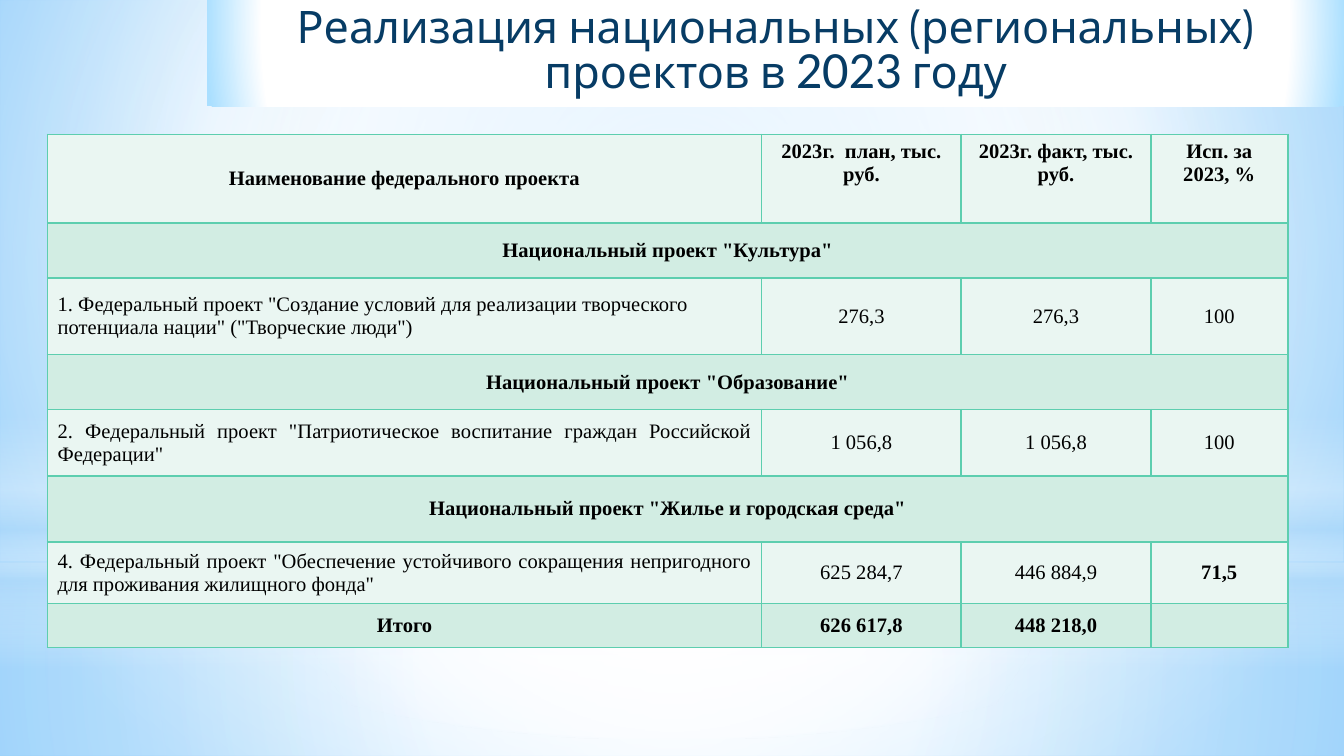
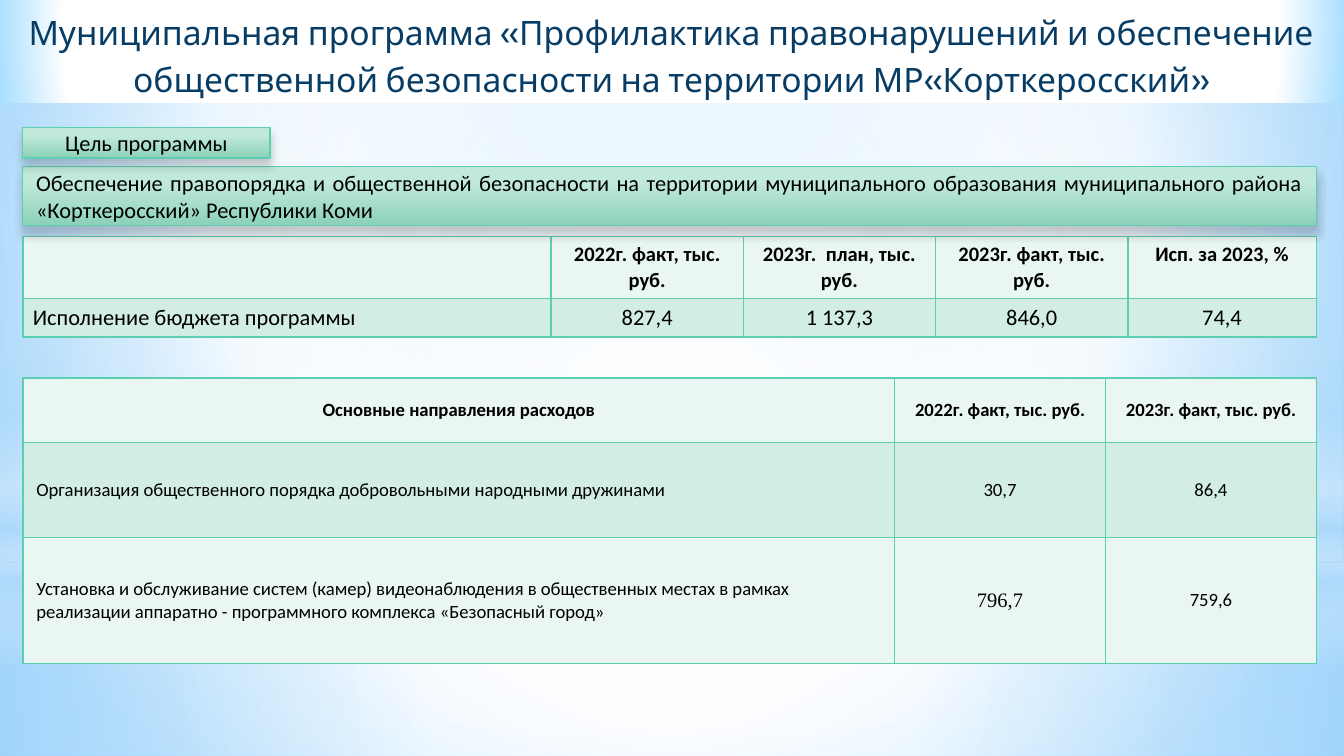
from lxml import etree
from pptx import Presentation
from pptx.dml.color import RGBColor
from pptx.enum.shapes import MSO_SHAPE
from pptx.enum.text import MSO_ANCHOR, PP_ALIGN
from pptx.oxml.ns import qn
from pptx.oxml.xmlchemy import OxmlElement
from pptx.util import Pt

RECT, OVAL = MSO_SHAPE.RECTANGLE, MSO_SHAPE.OVAL
TOP, MID = MSO_ANCHOR.TOP, MSO_ANCHOR.MIDDLE
LEFT, CENTER, JUST = PP_ALIGN.LEFT, PP_ALIGN.CENTER, PP_ALIGN.JUSTIFY

WHITE = RGBColor(0xFF, 0xFF, 0xFF)
BLACK = RGBColor(0, 0, 0)
NAVY = RGBColor(0x07, 0x3C, 0x65)
SKY = RGBColor(0x9E, 0xD5, 0xFF)
AZURE = RGBColor(0x5B, 0xB9, 0xFF)
ICE = RGBColor(0xAA, 0xDF, 0xFF)
HAZE = RGBColor(0xB4, 0xDC, 0xFA)
GREEN = RGBColor(0x5D, 0xCE, 0xAF)
MINT = RGBColor(0xC0, 0xE9, 0xDA)
SAGE = RGBColor(0x8C, 0xD1, 0xB8)
BANDS = (RGBColor(0xEA, 0xF6, 0xF2), RGBColor(0xD2, 0xED, 0xE3))

SANS, SERIF, HEAD = "Calibri", "Times New Roman", "Cabin"
BASE = (20, 10, 20, 60)
CORE = (50, 50, 50, 50)
TIGHT = dict(margin_left=Pt(5.4), margin_right=Pt(5.4),
             margin_top=Pt(3), margin_bottom=Pt(3))
LOOSE = {}

DECOR = (
    (RECT, (0, 301.5, 720, 103.5), CORE,
     ((0, WHITE, 91), (37, WHITE, 76), (100, HAZE, 79))),
    (RECT, (0, 0, 720, 301.5), CORE,
     ((0, WHITE, 89), (48, WHITE, 62), (100, HAZE, 79))),
    (RECT, (0, 222.5, 720, 135), None,
     ((0, WHITE, 0), (29, WHITE, 30), (45, HAZE, 40), (55, WHITE, 26),
      (65, HAZE, 60), (100, WHITE, 0))),
    (OVAL, (0, 94.5, 720, 301.5), CORE, ((0, WHITE, 100), (56, WHITE, 0))),
)


def put(obj, form):
    """Set every attribute named in the format dict."""
    for name, value in form.items():
        setattr(obj, name, value)


def pts(box):
    """Turn numbers into point lengths."""
    return [Pt(n) for n in box]


def tint(host, tag, color, alpha=100):
    """Add a colour, with its opacity, inside a new child."""
    node = etree.SubElement(host, qn(tag))
    node = etree.SubElement(node, qn("a:srgbClr"), val=str(color))
    if alpha < 100:
        etree.SubElement(node, qn("a:alpha"), val=str(alpha * 1000))


def grad(host, stops, focus=None):
    """Swap the solid fill of a host for a round or vertical gradient."""
    fill = OxmlElement("a:gradFill")
    fill.set("rotWithShape", "1")
    steps = etree.SubElement(fill, qn("a:gsLst"))
    for pos, color, alpha in stops:
        tint(steps, "a:gs", color, alpha)
        steps[-1].set("pos", str(pos * 1000))
    if focus:
        ring = etree.SubElement(fill, qn("a:path"), path="circle")
        sides = {k: str(v * 1000) for k, v in zip("ltrb", focus)}
        etree.SubElement(ring, qn("a:fillToRect"), **sides)
    else:
        etree.SubElement(fill, qn("a:lin"), ang="5400000", scaled="0")
    host.replace(host.find(qn("a:solidFill")), fill)


def paint(shape, stops, focus=None):
    """Give a shape a gradient and no shadow."""
    shape.fill.solid()
    grad(shape.element.spPr, stops, focus)
    shape.shadow.inherit = False


def write(para, text, face, size, color=BLACK, bold=False):
    """Add one formatted run."""
    run = para.add_run()
    run.text = text
    put(run.font, dict(name=face, size=Pt(size), bold=bold))
    run.font.color.rgb = color


def scene(master, slide):
    """Build the shared backdrop on the master."""
    master.background.fill.solid()
    grad(master.element.find(".//" + qn("p:bgPr")),
         ((0, SKY, 75), (60, WHITE, 100), (100, AZURE, 100)), BASE)
    tree = master.shapes.element
    for i, (kind, box, focus, stops) in enumerate(DECOR):
        shape = slide.shapes.add_shape(kind, *pts(box))
        paint(shape, stops, focus)
        shape.line.fill.background()
        shape.element.nvSpPr.cNvPr.set("id", str(50 + i))
        tree.insert(2 + i, shape.element)


def banner(slide, box, parts):
    """Place the title on its white band."""
    title = slide.shapes.title
    put(title, dict(zip(("left", "top", "width", "height"), pts(box))))
    paint(title, ((90, WHITE, 100), (100, ICE, 100)), BASE)
    frame = title.text_frame
    put(frame, dict(word_wrap=True, vertical_anchor=TOP))
    para = frame.paragraphs[0]
    put(para, dict(alignment=CENTER, line_spacing=Pt(25)))
    for text, face, size in parts:
        write(para, text, face, size, NAVY)


def panel(slide, box, text, align):
    """Place a green panel with a soft shadow."""
    shape = slide.shapes.add_shape(RECT, *pts(box))
    paint(shape, ((28, MINT, 100), (100, SAGE, 100)))
    shape.line.color.rgb = GREEN
    shape.line.width = Pt(0.75)
    glow = shape.element.spPr.find(qn("a:effectLst"))
    tint(glow, "a:outerShdw", BLACK, 20)
    put_xml = dict(blurRad=Pt(5), dist=Pt(4), dir=5400000, rotWithShape=0)
    for name, value in put_xml.items():
        glow[0].set(name, str(value))
    put(shape.text_frame, dict(word_wrap=True, vertical_anchor=MID))
    para = shape.text_frame.paragraphs[0]
    para.alignment = align
    write(para, text, SANS, 12)


def edge(cell):
    """Draw the four green borders of a cell."""
    props = cell._tc.get_or_add_tcPr()
    for i, tag in enumerate(("a:lnL", "a:lnR", "a:lnT", "a:lnB")):
        line = OxmlElement(tag)
        line.set("w", str(Pt(1)))
        tint(line, "a:solidFill", GREEN)
        props.insert(i, line)


def table(slide, spot, cols, rows, data, style):
    """Place a banded table; style(row, col) gives the looks of a cell."""
    box = (*spot, sum(cols), sum(rows))
    grid = slide.shapes.add_table(len(rows), len(cols), *pts(box)).table
    put(grid, dict(first_row=False, horz_banding=False))
    for col, wide in zip(grid.columns, cols):
        col.width = Pt(wide)
    for r, line in enumerate(data):
        grid.rows[r].height = Pt(rows[r])
        for c in range(len(cols)):
            cell = grid.cell(r, c)
            cell.fill.solid()
            cell.fill.fore_color.rgb = BANDS[r % 2]
            edge(cell)
            align, anchor, pad, font = style(r, c)
            put(cell, dict(pad, vertical_anchor=anchor))
            para = cell.text_frame.paragraphs[0]
            para.alignment = align
            if c < len(line) and line[c]:
                write(para, line[c], **font)
            else:
                tail = para._p.get_or_add_endParaRPr()
                tail.set("sz", str(font["size"] * 100))
        if len(line) == 1:
            grid.cell(r, 0).merge(grid.cell(r, len(cols) - 1))


def plan_look(r, c):
    """Style the table of national projects."""
    bold = r in (0, 1, 3, 5, 7) or (r, c) == (6, 3)
    align = {2: LEFT, 4: JUST, 6: JUST}.get(r, CENTER) if c == 0 else CENTER
    anchor = TOP if r == 0 and c else MID
    return align, anchor, TIGHT, dict(face=SERIF, size=11, bold=bold)


def sum_look(r, c):
    """Style the table of budget totals."""
    align = JUST if r and c == 0 else CENTER
    font = dict(face=SANS, size=12 if r else 11, bold=r == 0)
    return align, MID if r else TOP, TIGHT, font


def cost_look(r, c):
    """Style the table of spending lines."""
    align = LEFT if r and c == 0 else CENTER
    font = dict(face=SANS, size=10, bold=r == 0)
    if (r, c) == (2, 1):
        font.update(face=SERIF, size=11)
    return align, MID, LOOSE if r else TIGHT, font


def projects(slide):
    """Fill the slide on national projects."""
    banner(slide, (111, -0.5, 609, 57.5), (
        ("Реализация национальных (региональных) проектов в ", HEAD, 24),
        ("2023", SANS, 28),
        (" году", HEAD, 24)))
    table(slide, (25.5, 72), (382.5, 107, 101.5, 73.5),
          (47.5, 29.5, 41, 29.5, 35.5, 35.5, 33, 23.5), (
        ("Наименование федерального проекта", "2023г.  план, тыс. руб.",
         "2023г. факт, тыс. руб.", "Исп. за 2023, %"),
        ('Национальный проект "Культура"',),
        ('1. Федеральный проект "Создание условий для реализации творческого '
         'потенциала нации" ("Творческие люди")', "276,3", "276,3", "100"),
        ('Национальный проект "Образование"',),
        ('2. Федеральный проект "Патриотическое воспитание граждан '
         'Российской Федерации"', "1 056,8", "1 056,8", "100"),
        ('Национальный проект "Жилье и городская среда"',),
        ('4. Федеральный проект "Обеспечение устойчивого сокращения '
         'непригодного для проживания жилищного фонда"',
         "625 284,7", "446 884,9", "71,5"),
        ("Итого", "626 617,8", "448 218,0", "")), plan_look)


def safety(slide):
    """Fill the slide on the public safety programme."""
    left, wide = 12.25, 693
    banner(slide, (-0.5, -0.5, 720.5, 55.5), ((
        "Муниципальная программа «Профилактика правонарушений и обеспечение "
        "общественной безопасности на территории МР«Корткеросский»",
        HEAD, 18),))
    table(slide, (left, 126.75), (283, 103, 103, 103, 101), (26, 20), (
        ("", "2022г. факт, тыс. руб.", "2023г.  план, тыс. руб.",
         "2023г. факт, тыс. руб.", "Исп. за 2023, %"),
        ("Исполнение бюджета программы", "827,4", "1 137,3", "846,0",
         "74,4")), sum_look)
    panel(slide, (left, 89.25, wide, 31.5),
          "Обеспечение правопорядка и общественной безопасности на "
          "территории муниципального образования муниципального района "
          "«Корткеросский» Республики Коми", JUST)
    panel(slide, (left, 68.25, 132.5, 16.5), "Цель программы", CENTER)
    table(slide, (left, 202.5), (467, 113, 113), (34.5, 51, 67.5), (
        ("Основные направления расходов", "2022г. факт, тыс. руб.",
         "2023г. факт, тыс. руб."),
        ("Организация общественного порядка добровольными народными "
         "дружинами", "30,7", "86,4"),
        ("Установка и обслуживание систем (камер) видеонаблюдения в "
         "общественных местах в рамках реализации аппаратно - программного "
         "комплекса «Безопасный город»", "796,7", "759,6")), cost_look)


def main():
    """Build and save the deck."""
    deck = Presentation()
    put(deck, dict(slide_width=Pt(720), slide_height=Pt(405)))
    first, second = (deck.slides.add_slide(deck.slide_layouts[5])
                     for _ in range(2))
    scene(deck.slide_master, first)
    projects(first)
    safety(second)
    deck.save("out.pptx")


if __name__ == "__main__":
    main()
